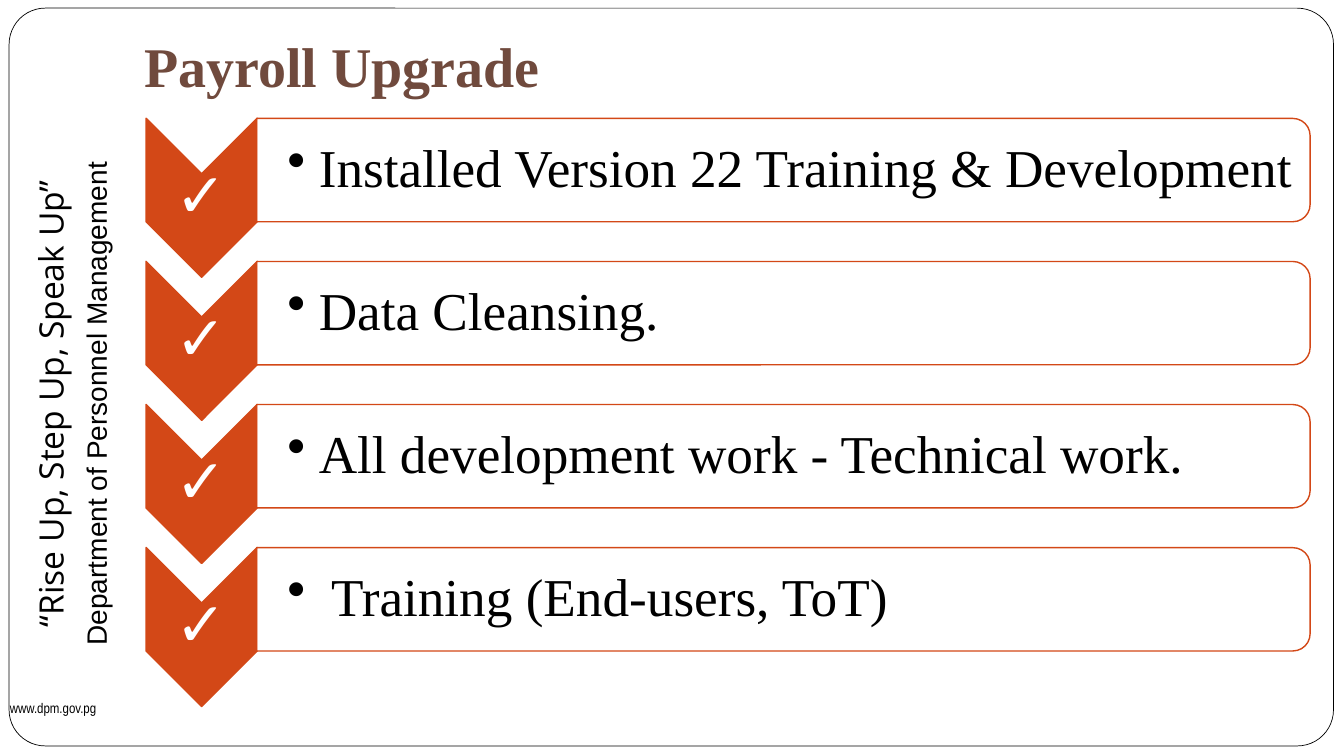
from lxml import etree
from pptx import Presentation
from pptx.dml.color import RGBColor
from pptx.enum import shapes, text
from pptx.oxml import ns
from pptx.util import Pt

ORANGE = RGBColor(0xD3, 0x48, 0x17)
BROWN = RGBColor(0x70, 0x4A, 0x3D)
BLACK = RGBColor(0, 0, 0)
WHITE = RGBColor(255, 255, 255)

STEPS = [
    "Installed Version 22 Training & Development",
    "Data Cleansing.",
    "All development work - Technical work.",
    " Training (End-users, ToT)",
]
ROW_PITCH = 102.2

presentation = Presentation()
presentation.slide_width, presentation.slide_height = Pt(960), Pt(540)
slide = presentation.slides.add_slide(presentation.slide_layouts[5])


def add_outline(kind, left, top, width, height, line_color, line_width, rotation=0):
    shape = slide.shapes.add_shape(kind, Pt(left), Pt(top), Pt(width), Pt(height))
    shape.rotation = rotation
    shape.shadow.inherit = False
    shape.line.color.rgb = line_color
    shape.line.width = Pt(line_width)
    return shape


def add_text(left, top, width, height, lines, color=BLACK, margins=(7.2, 3.6, 7.2, 3.6)):
    """Add a text box; lines holds (wording, font name, size) tuples."""
    box = slide.shapes.add_textbox(Pt(left), Pt(top), Pt(width), Pt(height))
    frame = box.text_frame
    frame.word_wrap = True
    frame.margin_left, frame.margin_top, frame.margin_right, frame.margin_bottom = map(Pt, margins)
    for index, (wording, font_name, size) in enumerate(lines):
        paragraph = frame.add_paragraph() if index else frame.paragraphs[0]
        paragraph.text = wording
        paragraph.font.name = font_name
        paragraph.font.size = Pt(size)
        paragraph.font.color.rgb = color
    return box


# Rounded slide frame
slide_frame = add_outline(shapes.MSO_SHAPE.ROUNDED_RECTANGLE, 6.5, 5.8, 946, 527, BLACK, 0.5)
slide_frame.adjustments[0] = 0.049
slide_frame.fill.background()

# Motto along the left edge and web address
motto = add_text(-176.4, 254.9, 455.8, 67, [
    ("“Rise Up, Step Up, Speak Up”", "Open Sans", 24),
    ("Department of Personnel Management", "Arial", 20),
])
motto.rotation = 270
for paragraph in motto.text_frame.paragraphs:
    paragraph.alignment = text.PP_ALIGN.CENTER
motto.text_frame.paragraphs[1].space_before = Pt(6)
add_text(0, 496, 112.3, 20, [("www.dpm.gov.pg", "Arial Narrow", 10)])

# Title
title = slide.shapes.title
title.left, title.top, title.width, title.height = Pt(95.8), Pt(21.6), Pt(840), Pt(56.2)
title_frame = title.text_frame
title_frame.text = "Payroll Upgrade"
title_frame.auto_size = text.MSO_AUTO_SIZE.NONE
title_frame.vertical_anchor = text.MSO_ANCHOR.BOTTOM
title_frame.margin_bottom = Pt(7.2)
heading = title_frame.paragraphs[0]
heading.alignment = text.PP_ALIGN.LEFT
heading.font.name = "Times New Roman"
heading.font.size = Pt(40)
heading.font.bold = True
heading.font.color.rgb = BROWN

# Checked steps: chevron with tick, then bar with bullet text
for row, step in enumerate(STEPS):
    offset = row * ROW_PITCH

    chevron = add_outline(shapes.MSO_SHAPE.CHEVRON, 87.2, 101.6 + offset, 113.6, 79.4, ORANGE, 1, 90)
    chevron.fill.solid()
    chevron.fill.fore_color.rgb = ORANGE
    tick = add_text(104, 123.8 + offset, 79.4, 34, [("✓", "Roboto", 44)], WHITE, (2, 2, 2, 2))
    tick.text_frame.vertical_anchor = text.MSO_ANCHOR.MIDDLE
    tick.text_frame.paragraphs[0].alignment = text.PP_ALIGN.CENTER
    tick.text_frame.paragraphs[0].line_spacing = 0.9

    bar = add_outline(shapes.MSO_SHAPE.ROUND_2_SAME_RECTANGLE, 522.7, -254.7 + offset, 73.8, 752.4, ORANGE, 1, 90)
    bar.fill.solid()
    bar.fill.fore_color.rgb = WHITE
    bar_color = bar.fill._xPr.find(".//" + ns.qn("a:solidFill"))[0]
    etree.SubElement(bar_color, ns.qn("a:alpha"), val="90000")

    label = add_text(183.6, 88 + offset, 752.4, 66.6, [(step, "Times New Roman", 38)], BLACK, (21.6, 2, 2, 2))
    label.text_frame.vertical_anchor = text.MSO_ANCHOR.MIDDLE
    paragraph = label.text_frame.paragraphs[0]
    paragraph.line_spacing = 0.9
    properties = paragraph._p.get_or_add_pPr()
    properties.set("marL", str(Pt(22.5)))
    properties.set("indent", str(Pt(-22.5)))
    bullet = etree.Element(ns.qn("a:buChar"), char="•")
    properties.find(ns.qn("a:lnSpc")).addnext(bullet)

presentation.save("out.pptx")
